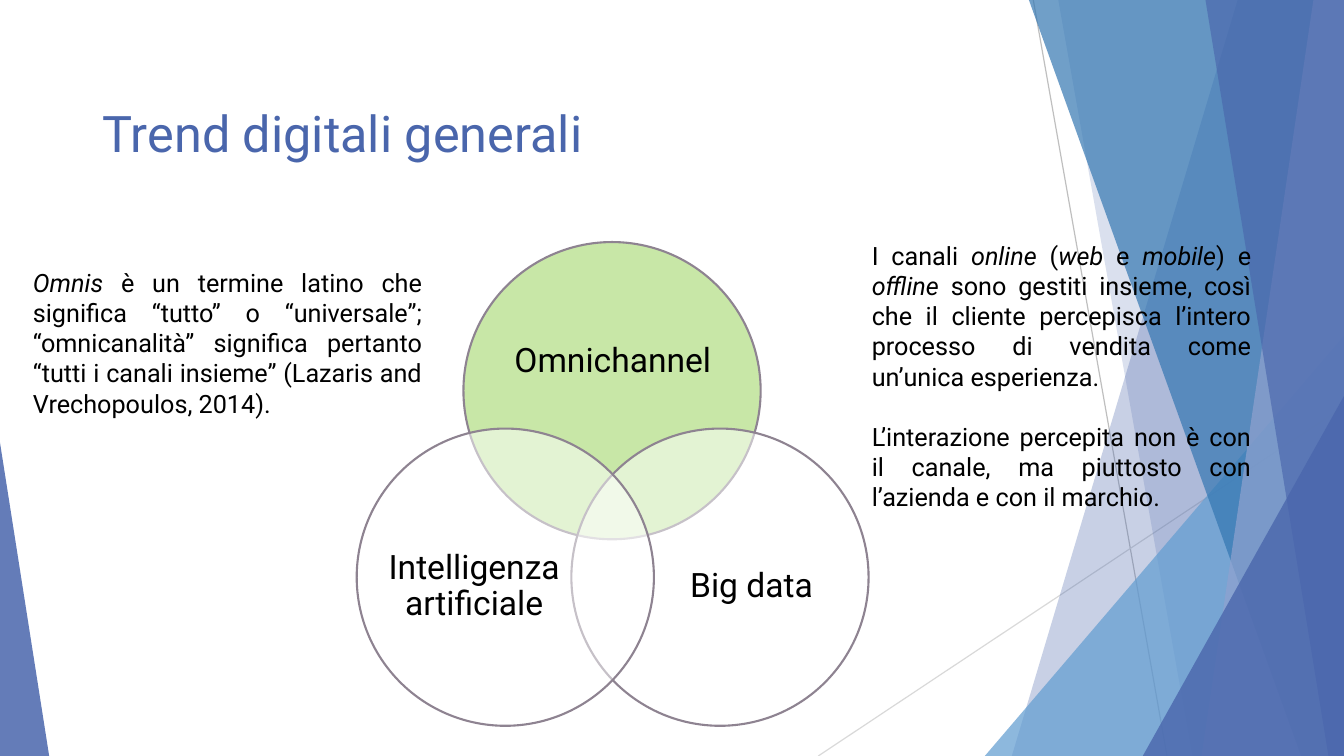
"""Build the slide on digital trends with its three-circle diagram."""
from lxml import etree
from pptx import Presentation, util as u
from pptx.dml import color
from pptx.enum import shapes, text
from pptx.oxml import ns

HUES = {
    "blue": "4A66AC", "sky": "629DD1", "sea": "3477B2", "pale": "90A2CF",
    "green": "92D050", "white": "FFFFFF", "black": "000000",
    "edge": "8E8391", "gray": "BFBFBF", "light": "D9D9D9",
}
WIDE, HIGH = 33.87, 19.05
ROUND = 7.49


def rgb(hue):
    """Return the named colour."""
    return color.RGBColor.from_string(HUES[hue])


def paint(shape, hue, alpha):
    """Fill a shape with a see-through colour and no line."""
    shape.shadow.inherit = False
    shape.fill.solid()
    shape.fill.fore_color.rgb = rgb(hue)
    tint = shape._element.spPr.find(ns.qn("a:solidFill"))[0]
    etree.SubElement(tint, ns.qn("a:alpha"), val=str(alpha * 1000))
    shape.line.fill.background()


def add_line(slide, ends, hue):
    """Draw a thin straight line."""
    kind = shapes.MSO_CONNECTOR.STRAIGHT
    line = slide.shapes.add_connector(kind, *map(u.Cm, ends))
    line.line.color.rgb = rgb(hue)
    line.line.width = u.Cm(0.03)
    etree.SubElement(line._element.spPr, ns.qn("a:effectLst"))


def add_shard(slide, top, base, hue, alpha):
    """Draw a full-height band from a slanted edge to the right side."""
    pen = slide.shapes.build_freeform(u.Cm(top), 0)
    spots = [(WIDE, 0), (WIDE, HIGH), (base, HIGH)]
    pen.add_line_segments([(u.Cm(x), u.Cm(y)) for x, y in spots])
    paint(pen.convert_to_shape(), hue, alpha)


def add_wedge(slide, left, top, width, peak, hue, alpha):
    """Draw a triangle that stands on the bottom edge."""
    kind = shapes.MSO_SHAPE.ISOSCELES_TRIANGLE
    box = map(u.Cm, (left, top, width, HIGH - top))
    wedge = slide.shapes.add_shape(kind, *box)
    wedge.adjustments[0] = peak
    paint(wedge, hue, alpha)


def add_text(slide, box, paras, size, hue="black", align=text.PP_ALIGN.LEFT):
    """Add a text box where stars switch italics on and off."""
    frame = slide.shapes.add_textbox(*map(u.Cm, box)).text_frame
    frame.word_wrap = True
    for i, words in enumerate(paras):
        para = frame.add_paragraph() if i else frame.paragraphs[0]
        para.alignment = align
        if i:
            para.space_before = u.Cm(0.76)
        for j, part in enumerate(words.split("*")):
            if part:
                run = para.add_run()
                run.text = part
                run.font.name = "Roboto"
                run.font.size = u.Pt(size)
                run.font.italic = j % 2 == 1
                run.font.color.rgb = rgb(hue)
    return frame


def add_ring(slide, left, top, hue, label, box):
    """Draw one circle of the diagram with its label."""
    spot = map(u.Cm, (left, top, ROUND, ROUND))
    ring = slide.shapes.add_shape(shapes.MSO_SHAPE.OVAL, *spot)
    paint(ring, hue, 50)
    ring.line.color.rgb = rgb("edge")
    ring.line.width = u.Pt(1.5)
    frame = add_text(slide, box, [label], 24, align=text.PP_ALIGN.CENTER)
    frame.margin_left = frame.margin_right = 0
    frame.margin_top = frame.margin_bottom = 0
    frame.vertical_anchor = text.MSO_ANCHOR.MIDDLE
    frame.paragraphs[0].line_spacing = 0.9


def add_decor(slide):
    """Draw the lines, bands and triangles at the sides."""
    add_line(slide, (26.04, 0, 29.41, HIGH), "gray")
    add_line(slide, (WIDE, 10.24, 20.62, HIGH), "light")
    add_shard(slide, 31.19, 25.5, "blue", 30)
    add_shard(slide, 26.67, 30.05, "blue", 20)
    add_wedge(slide, 24.82, 8.46, 9.05, 1, "sky", 72)
    add_shard(slide, 25.93, 32.79, "sea", 70)
    add_shard(slide, 33.1, 30.28, "pale", 70)
    add_shard(slide, 30.38, 33.48, "blue", 65)
    add_wedge(slide, 28.8, 9.98, 5.07, 1, "blue", 80)
    add_wedge(slide, 0, 11.15, 1.24, 0, "blue", 85)


def main():
    """Build and save the slide."""
    deck = Presentation()
    deck.slide_width, deck.slide_height = u.Cm(WIDE), u.Cm(HIGH)
    slide = deck.slides.add_slide(deck.slide_layouts[6])
    add_decor(slide)
    add_ring(slide, 11.68, 6.1, "green", "Omnichannel",
             (12.7, 7.42, 5.49, 3.38))
    add_ring(slide, 14.4, 10.8, "white", "Big data",
             (16.69, 12.73, 4.5, 4.11))
    add_ring(slide, 8.99, 10.8, "white", "Intelligenza artificiale",
             (9.7, 12.73, 4.5, 4.11))
    full = text.PP_ALIGN.JUSTIFY
    add_text(slide, (0.58, 6.6, 10.31, 4.11), [
        "*Omnis* è un termine latino che significa “tutto” o “universale”; "
        "“omnicanalità” significa pertanto “tutti i canali insieme” "
        "(Lazaris and Vrechopoulos, 2014).",
    ], 18, align=full)
    add_text(slide, (21.72, 5.92, 10.06, 7.19), [
        "I canali *online *(*web *e *mobile*) e *offline* sono gestiti "
        "insieme, così che il cliente percepisca l’intero processo di "
        "vendita come un’unica esperienza.",
        "L’interazione percepita non è con il canale, ma piuttosto con "
        "l’azienda e con il marchio.",
    ], 18, align=full)
    add_text(slide, (2.34, 2.44, 27.28, 3.68),
             ["Trend digitali generali"], 36, "blue")
    deck.save("out.pptx")


if __name__ == "__main__":
    main()
